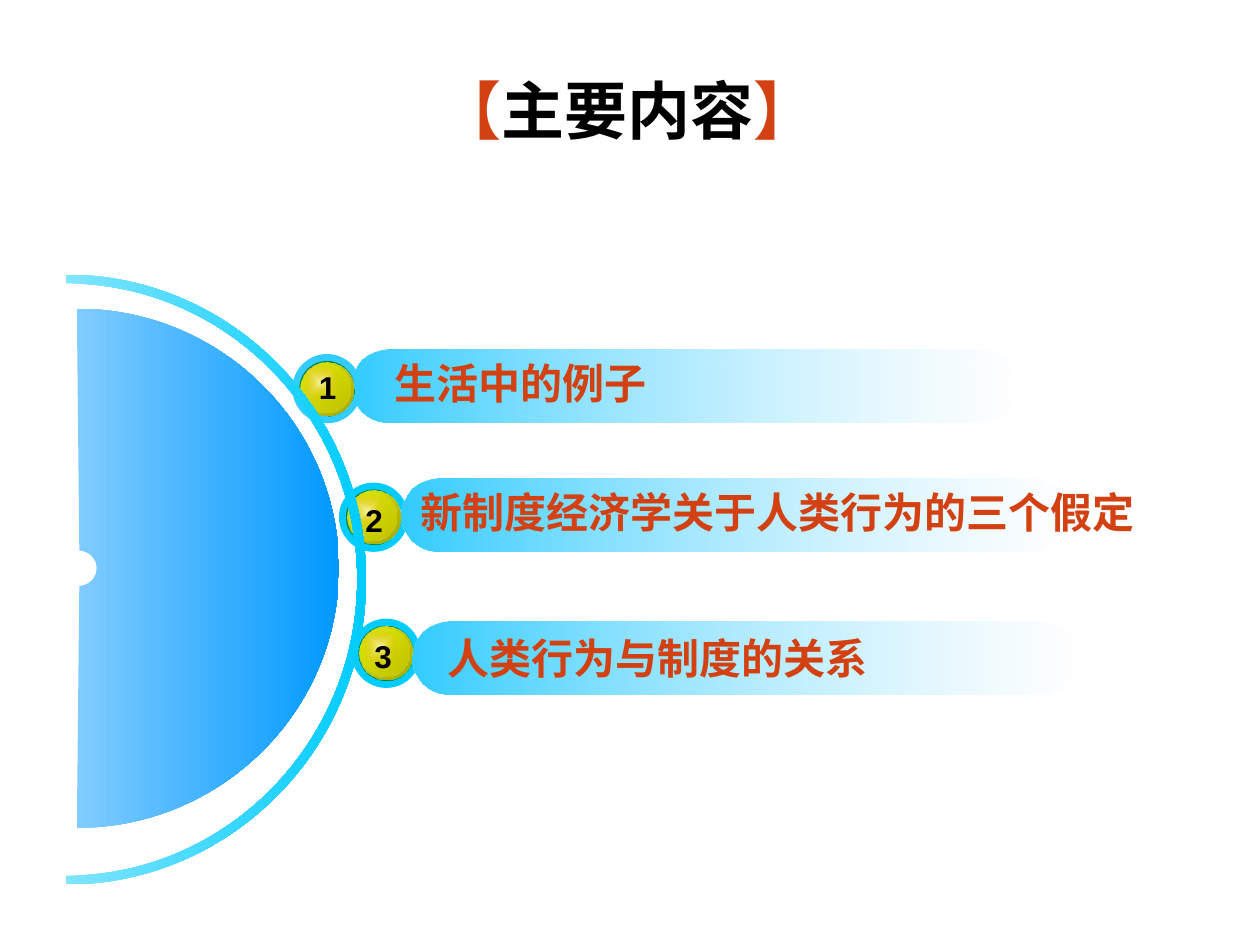
"""Build the contents slide: a half disc and ring leading to three numbered topics."""
from lxml import etree
from pptx import Presentation
from pptx import util as u
from pptx.dml import color
from pptx.enum import shapes, text
from pptx.oxml import ns

deck = Presentation()
deck.slide_width, deck.slide_height = u.Inches(10), u.Inches(7.5)
cell = deck.slide_width / 100
slide = deck.slides.add_slide(deck.slide_layouts[5])


def place(*cells):
    return [round(n * cell) for n in cells]


def paint(fill, *hexes, opacity=(100, 100), angle=0, focus=None):
    if len(hexes) == 1:
        fill.solid()
        fill.fore_color.rgb = color.RGBColor.from_string(hexes[0])
        return
    fill.gradient()
    fill.gradient_angle = angle
    for stop, shade in zip(fill.gradient_stops, hexes):
        stop.color.rgb = color.RGBColor.from_string(shade)
    gradient = fill._xPr.find(ns.qn("a:gradFill"))
    for shade, percent in zip(gradient.iter(ns.qn("a:srgbClr")), opacity):
        if percent < 100:
            etree.SubElement(shade, ns.qn("a:alpha"), val=str(percent * 1000))
    if focus:
        gradient.remove(gradient.find(ns.qn("a:lin")))
        route = etree.SubElement(gradient, ns.qn("a:path"), path=focus[0])
        edges = {side: str(share * 1000) for side, share in zip("ltrb", focus[1:])}
        etree.SubElement(route, ns.qn("a:fillToRect"), edges)


ACCENT, INK = "D34113", "000000"
topics = [
    ("生活中的例子", (27.9, 27.75), (23.2, 28.1), "33CCFF", (1.1, 0.6), (30.3, 27.9, 50.4)),
    ("新制度经济学关于人类行为的三个假定", (31.9, 38), (26.9, 38.3), "00CCFF", (1.1, 1),
     (32.4, 38.1, 62.2)),
    ("人类行为与制度的关系", (32.7, 49.3), (27.9, 49.1), "00CCFF", (0.8, 1),
     (34.5, 49.7, 52.8)),
]
badge_layers = [
    (0.55, 4.4, ["10E470", "098340"], {"focus": ("rect", 100, 100, 0, 0)}),
    (0.65, 4.2, ["FFFF00", "A2A200"], {"opacity": (85, 100), "angle": 315}),
    (0.85, 2.8, ["FFFFFF", "E9940B"],
     {"opacity": (100, 0), "focus": ("shape", 50, 50, 50, 50)}),
    (0.8, 3.8, ["FFFF00", "C2C200"], {"opacity": (0, 100), "angle": 315}),
]
disc_sides = [(6.3, 45.1, 1.4, 1.4, 1), (6.1, 45.1, 20.8, 20.6, -1)]
ring_sides = [(5.25, 46, 23.1, 23.5, 1), (5.25, 46, 23.8, 24.2, -1)]
arcs = [(disc_sides, "80CCFF", "0099FF"), (ring_sides, "80E5FF", "00CCFF")]
half_turn = [(0, -1), (0.55, -1), (1, -0.55), (1, 0), (1, 0.55), (0.55, 1), (0, 1)]
layers = [("arc", 0), ("bar", 0), ("badge", 0), ("badge", 1), ("badge", 2),
          ("bar", 2), ("bar", 1), ("arc", 1)]
drawn, wording = [], []

for kind, index in layers:
    if kind == "arc":
        sides, *shades = arcs[index]
        outline = [place(x + rx * dx, y + ry * dy * way)
                   for x, y, rx, ry, way in sides for dx, dy in half_turn]
        pen = slide.shapes.build_freeform(*outline[0])
        pen.add_line_segments(outline[1:], close=True)
        arc = pen.convert_to_shape()
        lines = list(arc.element.iter(ns.qn("a:lnTo")))
        for start in (0, 3, 7, 10):
            first, *others = lines[start:start + 3]
            first.tag = ns.qn("a:cubicBezTo")
            for other in others:
                first.append(other[0])
                other.getparent().remove(other)
        paint(arc.fill, *shades)
        drawn.append(arc)
        continue
    _, bar_at, (left, top), rim, (shift_x, shift_y), _ = topics[index]
    if kind == "bar":
        bar = slide.shapes.add_shape(shapes.MSO_SHAPE.ROUNDED_RECTANGLE,
                                     *place(*bar_at, 52.8, 5.8))
        bar.adjustments[0] = 0.5
        paint(bar.fill, "33CCFF", "FFFFFF", opacity=(100, 50))
        drawn.append(bar)
        continue
    badge = slide.shapes.add_group_shape()
    for inset, size, shades, style in [(0, 5.5, [rim], {})] + badge_layers:
        disc = badge.shapes.add_shape(shapes.MSO_SHAPE.OVAL,
                                      *place(left + inset, top + inset, size, size))
        paint(disc.fill, *shades, **style)
        drawn.append(disc)
    digit = slide.shapes.add_textbox(*place(left + shift_x, top + shift_y, 3.4, 4))
    wording.append((digit, 18, text.PP_ALIGN.CENTER, False, [(str(index + 1), INK)]))

for topic, *_, (left, top, width) in topics:
    label = slide.shapes.add_textbox(*place(left, top, width, 5))
    wording.append((label, 24, text.PP_ALIGN.LEFT, True, [(topic, ACCENT)]))

title = slide.shapes.title
title.left, title.top, title.width, title.height = place(30.9, 5.15, 37.8, 7.1)
title.element.getparent().append(title.element)
wording.append((title, 36, text.PP_ALIGN.CENTER, True,
                [("【", ACCENT), ("主要内容", INK), ("】", ACCENT)]))

for part in drawn:
    part.line.fill.background()
    part.shadow.inherit = False

for holder, size, alignment, wraps, runs in wording:
    holder.text_frame.word_wrap = wraps
    line = holder.text_frame.paragraphs[0]
    line.alignment = alignment
    for words, shade in runs:
        run = line.add_run()
        run.text = words
        run.font.name, run.font.size, run.font.bold = "Arial", u.Pt(size), True
        paint(run.font.fill, shade)

deck.save("out.pptx")
